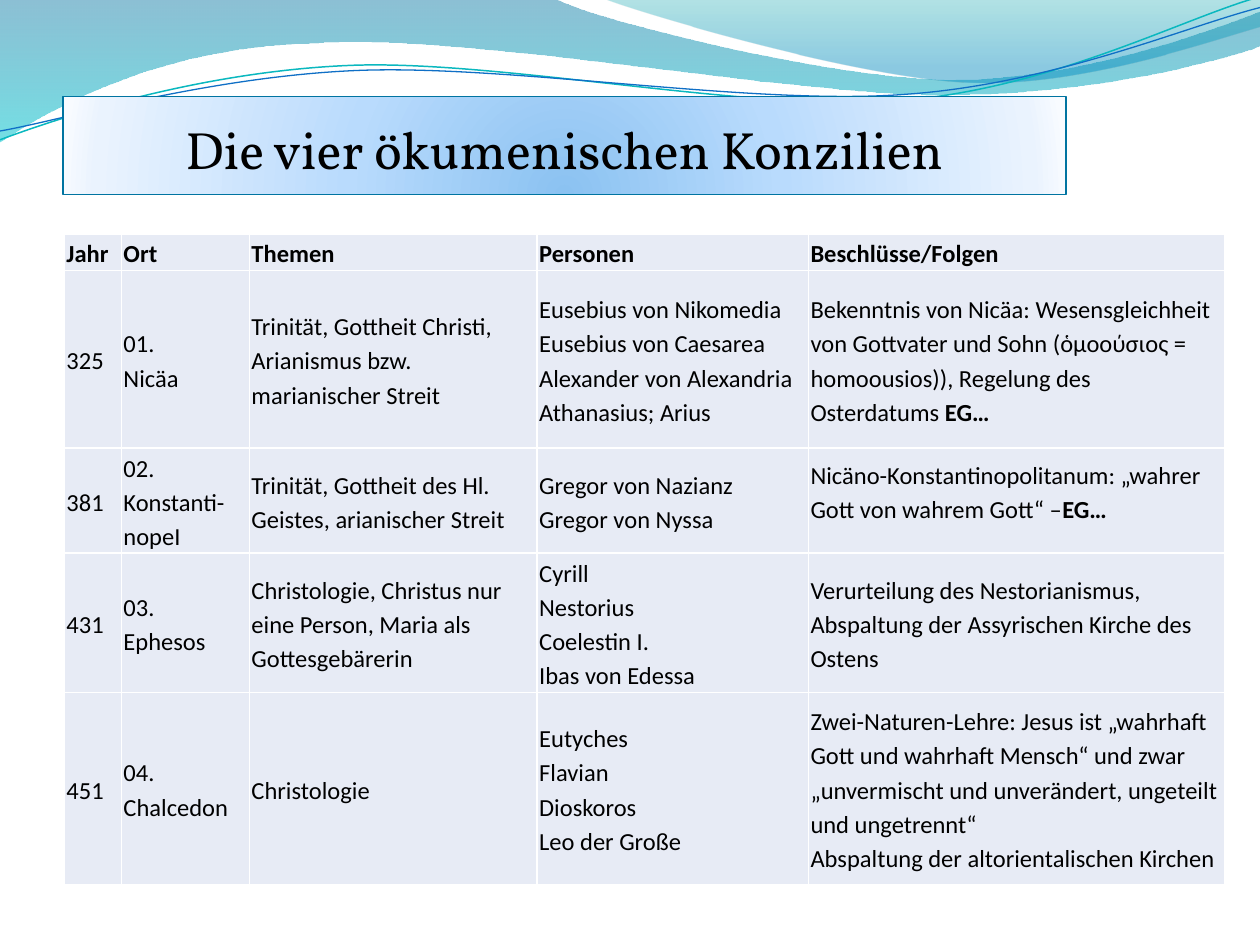
from copy import deepcopy
from lxml import etree
from pptx import Presentation
from pptx.dml.color import RGBColor
from pptx.enum.text import MSO_ANCHOR, PP_ALIGN
from pptx.oxml import parse_xml
from pptx.oxml.ns import nsdecls, qn
from pptx.util import Cm, Pt

MIDDLE = MSO_ANCHOR.MIDDLE
CENTER = PP_ALIGN.CENTER

BLACK = RGBColor(0x00, 0x00, 0x00)
WHITE = RGBColor(0xFF, 0xFF, 0xFF)
CELL_BLUE = RGBColor(0xE7, 0xEB, 0xF5)
DEEP_BLUE = RGBColor(0x00, 0x74, 0xA1)
CYAN = RGBColor(0x00, 0xC6, 0xCF)
TEAL = RGBColor(0x00, 0xA1, 0xA9)
OCEAN = RGBColor(0x00, 0x8B, 0xBF)
LINE_TEAL = RGBColor(0x0A, 0xB8, 0xBF)
LINE_BLUE = RGBColor(0x0F, 0x6F, 0xC6)
TITLE_STOPS = [
    (0, RGBColor(0x8B, 0xC2, 0xF1), 100),
    (43, RGBColor(0xB9, 0xDB, 0xFD), 100),
    (93, RGBColor(0xEA, 0xF3, 0xFE), 100),
    (100, RGBColor(0xF8, 0xFB, 0xFF), 100),
]
DOWNWARD = '<a:lin ang="5400000" scaled="0"/>'
RADIAL = '<a:path path="circle"><a:fillToRect l="50000" t="130000" r="50000" b="-30000"/></a:path>'

INCH = 2.54
BORDER_SIDES = ("lnL", "lnR", "lnT", "lnB")

TITLE_FONT = {"name": "Vollkorn", "size": Pt(30), "bold": False}
BODY_FONT = {"name": "Calibri", "size": Pt(14), "bold": False}
BOLD_FONT = {**BODY_FONT, "bold": True}
TITLE_FRAME = {
    "margin_left": 0, "margin_top": Cm(0.13), "margin_right": 0, "margin_bottom": 0,
    "vertical_anchor": MIDDLE, "word_wrap": True,
}
CELL_FORMAT = {
    "margin_left": Cm(0.04), "margin_top": Cm(0.02), "margin_right": Cm(0.04),
    "margin_bottom": Cm(0.02), "vertical_anchor": MIDDLE,
}

# Points are inches; a pair is a straight step, six numbers are a Bézier step.
BANDS = [
    ([(0, 0), (4.4, -0.01), (4.76, 0.17, 6.64, 0.63, 7.58, 0.63),
      (8.53, 0.63, 9.58, 0.26, 10, 0.09), (10.01, 0.36),
      (9.83, 0.44, 8.7, 0.76, 7.46, 0.75), (6.22, 0.75, 3.82, 0.28, 2.57, 0.34),
      (1.29, 0.36, 0.46, 0.83, -0.01, 1.13)],
     [(0, DEEP_BLUE, 45), (100, CYAN, 55)]),
    ([(4.79, -0.01), (5.09, 0.11, 6.82, 0.62, 7.69, 0.65),
      (8.56, 0.69, 9.61, 0.32, 10, 0.21), (10, 0)],
     [(0, TEAL, 30), (80, OCEAN, 45)]),
]
WAVES = [
    ([(0, 1.11), (0.48, 0.93, 1.58, 0.57, 2.77, 0.52),
      (3.95, 0.47, 5.93, 0.89, 7.13, 0.8), (8.33, 0.71, 9.38, 0.15, 9.98, -0.02)],
     LINE_TEAL, 0.85),
    ([(0, 1.04), (0.47, 0.96, 1.64, 0.61, 2.83, 0.56),
      (4.03, 0.51, 5.97, 0.84, 7.17, 0.75), (8.36, 0.67, 9.41, 0.21, 10, 0.06)],
     LINE_BLUE, 0.75),
]

COLUMN_WIDTHS = (1.15, 2.58, 5.8, 5.47, 8.39)
ROW_HEIGHTS = (0.71, 3.58, 2.12, 2.79, 3.87)
BOLD_ENDING = "EG…"
COUNCILS = [
    ("Jahr", "Ort", "Themen", "Personen", "Beschlüsse/Folgen"),
    ("325", "01.\nNicäa", "Trinität, Gottheit Christi, Arianismus bzw. marianischer Streit",
     "Eusebius von Nikomedia\vEusebius von Caesarea\vAlexander von Alexandria\vAthanasius; Arius",
     "Bekenntnis von Nicäa: Wesensgleichheit von Gottvater und Sohn "
     "(ὁμοούσιος = homoousios)), Regelung des Osterdatums EG…"),
    ("381", "02. Konstanti-\nnopeI", "Trinität, Gottheit des Hl. Geistes, arianischer Streit",
     "Gregor von Nazianz\vGregor von Nyssa",
     "Nicäno-Konstantinopolitanum: „wahrer Gott von wahrem Gott“ –EG…"),
    ("431", "03.\nEphesos", "Christologie, Christus nur eine Person, Maria als Gottesgebärerin",
     "Cyrill\vNestorius\vCoelestin I.\vIbas von Edessa",
     "Verurteilung des Nestorianismus, Abspaltung der Assyrischen Kirche des Ostens"),
    ("451", "04. Chalcedon", "Christologie", "Eutyches\vFlavian\vDioskoros\vLeo der Große",
     "Zwei-Naturen-Lehre: Jesus ist „wahrhaft Gott und wahrhaft Mensch“ und zwar "
     "„unvermischt und unverändert, ungeteilt und ungetrennt“ \v"
     "Abspaltung der altorientalischen Kirchen"),
]


def apply_format(target, values):
    """Set every attribute named in values on the target."""
    for name, value in values.items():
        setattr(target, name, value)


def add_text(paragraph, text, font):
    """Append black text in the given font, broken at vertical tabs."""
    for index, line in enumerate(text.split("\v")):
        if index:
            paragraph.add_line_break()
            paragraph._p.findall(qn("a:br"))[-1].append(deepcopy(run._r.rPr))
        run = paragraph.add_run()
        run.text = line
        apply_format(run.font, font)
        run.font.color.rgb = BLACK


def set_gradient(shape, stops, direction):
    """Fill a shape with a gradient of (position, colour, opacity) stops."""
    shape.fill.background()
    stop_xml = "".join(
        f'<a:gs pos="{position * 1000}"><a:srgbClr val="{color}">'
        f'<a:alpha val="{opacity * 1000}"/></a:srgbClr></a:gs>'
        for position, color, opacity in stops)
    properties = shape._element.spPr
    properties.replace(properties.find(qn("a:noFill")), parse_xml(
        f'<a:gradFill {nsdecls("a")} rotWithShape="1"><a:gsLst>{stop_xml}</a:gsLst>'
        f'{direction}</a:gradFill>'))


def add_outline(slide, steps, close):
    """Add a shadowless freeform whose six-number steps are Bézier curves."""
    corners = [(Cm(step[-2] * INCH), Cm(step[-1] * INCH)) for step in steps]
    builder = slide.shapes.build_freeform(*corners[0])
    builder.add_line_segments(corners[1:], close=close)
    shape = builder.convert_to_shape()
    shape.shadow.inherit = False
    segments = list(shape._element.spPr.iter(qn("a:lnTo")))
    for segment, step in zip(segments, steps[1:]):
        if len(step) == 6:
            curve = etree.Element(qn("a:cubicBezTo"))
            for x, y in zip(step[::2], step[1::2]):
                etree.SubElement(curve, qn("a:pt"), x=str(Cm(x * INCH) - shape.left),
                                 y=str(Cm(y * INCH) - shape.top))
            segment.getparent().replace(segment, curve)
    return shape


def add_band(slide, steps, stops):
    """Add a translucent gradient band."""
    shape = add_outline(slide, steps, True)
    set_gradient(shape, stops, DOWNWARD)
    shape.line.fill.background()


def add_wave(slide, steps, color, width):
    """Add a thin open wave line."""
    shape = add_outline(slide, steps, False)
    shape.fill.background()
    shape.line.color.rgb = color
    shape.line.width = Pt(width)


def format_title(slide, text):
    """Place the title in front of the waves and format it."""
    title = slide.shapes.title
    slide.shapes._spTree.append(title._element)
    apply_format(title, {"left": Cm(1.27), "top": Cm(1.95),
                         "width": Cm(20.22), "height": Cm(1.97)})
    set_gradient(title, TITLE_STOPS, RADIAL)
    title.line.color.rgb = DEEP_BLUE
    title.line.width = Pt(0.75)
    title.shadow.inherit = False
    apply_format(title.text_frame, TITLE_FRAME)
    paragraph = title.text_frame.paragraphs[0]
    paragraph.alignment = CENTER
    add_text(paragraph, text, TITLE_FONT)


def set_borders(cell):
    """Give a cell thin white borders."""
    properties = cell._tc.get_or_add_tcPr()
    for side in BORDER_SIDES:
        line = etree.SubElement(properties, qn(f"a:{side}"), w=str(Pt(1)))
        fill = etree.SubElement(line, qn("a:solidFill"))
        etree.SubElement(fill, qn("a:srgbClr"), val=str(WHITE))


def fill_cell(cell, text, font):
    """Write one paragraph per line and format the cell."""
    apply_format(cell, CELL_FORMAT)
    set_borders(cell)
    cell.fill.solid()
    cell.fill.fore_color.rgb = CELL_BLUE
    frame = cell.text_frame
    for index, line in enumerate(text.split("\n")):
        paragraph = frame.add_paragraph() if index else frame.paragraphs[0]
        paragraph.line_spacing = 1.15
        add_text(paragraph, line.removesuffix(BOLD_ENDING), font)
        if line.endswith(BOLD_ENDING):
            add_text(paragraph, BOLD_ENDING, BOLD_FONT)


def add_council_table(slide):
    """Add the table of councils."""
    table = slide.shapes.add_table(
        len(ROW_HEIGHTS), len(COLUMN_WIDTHS), Cm(1.3), Cm(4.72),
        Cm(sum(COLUMN_WIDTHS)), Cm(sum(ROW_HEIGHTS))).table
    apply_format(table, {"first_row": False, "horz_banding": False})
    for column, width in zip(table.columns, COLUMN_WIDTHS):
        column.width = Cm(width)
    for index, (row, height) in enumerate(zip(table.rows, ROW_HEIGHTS)):
        row.height = Cm(height)
        for cell, text in zip(row.cells, COUNCILS[index]):
            fill_cell(cell, text, BODY_FONT if index else BOLD_FONT)
    table.cell(2, 4).margin_bottom = Cm(0.42)


def main():
    """Build and save the slide."""
    presentation = Presentation()
    presentation.slide_width, presentation.slide_height = Cm(25.4), Cm(19.05)
    slide = presentation.slides.add_slide(presentation.slide_layouts[5])
    for steps, stops in BANDS:
        add_band(slide, steps, stops)
    for steps, color, width in WAVES:
        add_wave(slide, steps, color, width)
    format_title(slide, "Die vier ökumenischen Konzilien")
    add_council_table(slide)
    presentation.save("out.pptx")


if __name__ == "__main__":
    main()
